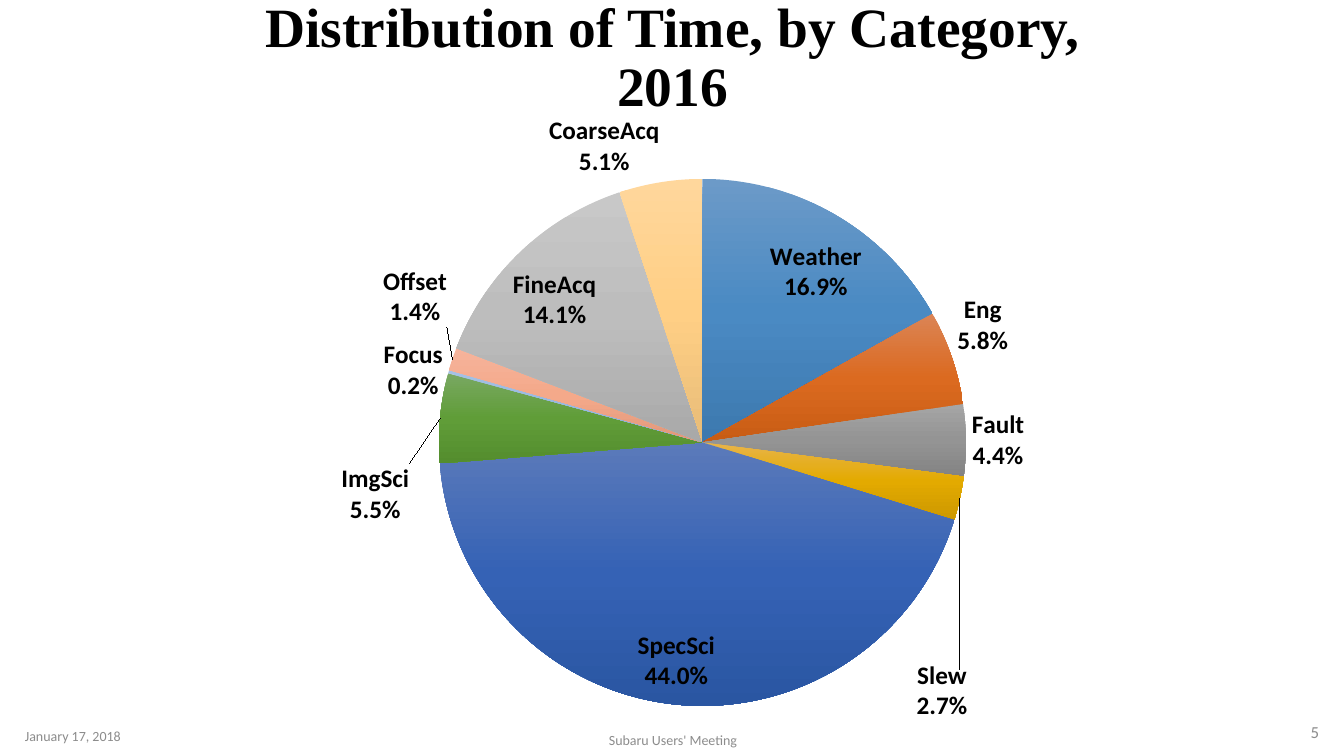
from copy import deepcopy

from lxml import etree
from pptx import Presentation
from pptx.chart.data import CategoryChartData
from pptx.dml.color import RGBColor
from pptx.enum.chart import XL_CHART_TYPE, XL_LABEL_POSITION
from pptx.enum.text import MSO_ANCHOR, PP_ALIGN
from pptx.oxml import parse_xml
from pptx.oxml.ns import nsdecls, qn
from pptx.util import Emu, Pt

PIE, FIT = XL_CHART_TYPE.PIE, XL_LABEL_POSITION.BEST_FIT
OUT = XL_LABEL_POSITION.OUTSIDE_END
LEFT, MID, RIGHT = PP_ALIGN.LEFT, PP_ALIGN.CENTER, PP_ALIGN.RIGHT
CENTER = MSO_ANCHOR.MIDDLE

TITLE = "Distribution of Time, by Category, 2016"
TITLE_BOX = (219, 0, 907, 118)
FOOT = [
    ("January 17, 2018", (15, 716, 302, 40), 10, LEFT),
    ("Subaru Users' Meeting", (446, 720, 454, 40), 10, MID),
    ("5", (1027, 712, 302, 40), 12, RIGHT),
]
# category, percent, gradient from top to bottom
SLICES = [
    ("Weather", 16.9, ("6C9AC8", "4A8AC3", "3D79AF")),
    ("Eng", 5.8, ("DB8455", "DB6A20", "C85C14")),
    ("Fault", 4.4, ("A5A5A5", "949494", "838383")),
    ("Slew", 2.7, ("E8B44A", "E3AA00", "CC9800")),
    ("SpecSci", 44.0, ("5B7ABA", "3562B5", "2A56A2")),
    ("ImgSci", 5.5, ("79A862", "609D38", "548D2E")),
    ("Focus", 0.2, ("A5C1E5", "97B9E0", "88A9D0")),
    ("Offset", 1.4, ("F6B39B", "F4A98A", "E0977A")),
    ("FineAcq", 14.1, ("C8C8C8", "BDBDBD", "A9A9A9")),
    ("CoarseAcq", 5.1, ("FFD79C", "FFCF85", "E8BC78")),
]
CHART = (243, 100, 904, 621)
DISC = (439, 179, 527, 527)
MOVED = {"Slew": (-49, 170), "ImgSci": (-25, 107)}
SCALE = 914400 / 100.8


def px(*nums):
    return [Emu(round(n * SCALE)) for n in nums]


def rgb(code):
    return RGBColor.from_string(code)


def style(font, size, color, bold=False, name="Calibri"):
    font.name, font.size, font.bold = name, Pt(size), bold
    font.color.rgb = rgb(color)


def write(frame, text, align, *look):
    frame.word_wrap = True
    frame.vertical_anchor = CENTER
    para = frame.paragraphs[0]
    para.alignment = align
    run = para.add_run()
    run.text = text
    style(run.font, *look)
    return para


def layout(x, y, size=None):
    """Manual chart layout, in fractions of the chart."""
    parts = []
    if size:
        parts += [("layoutTarget", "inner"), ("xMode", "edge"), ("yMode", "edge")]
    parts += [("x", round(x, 4)), ("y", round(y, 4))]
    if size:
        parts += [("w", round(size[0], 4)), ("h", round(size[1], 4))]
    node = parse_xml(f"<c:layout {nsdecls('c')}><c:manualLayout/></c:layout>")
    for tag, val in parts:
        etree.SubElement(node[0], qn("c:" + tag)).set("val", str(val))
    return node


def shade(fill, colors):
    fill.gradient()
    fill.gradient_angle = 270
    stops = fill.gradient_stops
    first = stops[0]._gs
    first.addnext(deepcopy(first))
    for stop, color, place in zip(fill.gradient_stops, colors, (0, 0.5, 1)):
        stop.color.rgb = rgb(color)
        stop.position = place


def move(label, dx, dy):
    """Shift one label from its usual place, keeping its name and percent."""
    style(label.font, 18, "000000", True)
    label.position = OUT
    node = label._get_or_add_dLbl()
    node.find(qn("c:idx")).addnext(layout(dx / CHART[2], dy / CHART[3]))
    form = parse_xml(
        f'<c:numFmt {nsdecls("c")} formatCode="0.0%" sourceLinked="0"/>')
    node.find(qn("c:txPr")).addprevious(form)
    for tag, val in (("Val", "0"), ("CatName", "1"), ("Percent", "1")):
        node.find(qn("c:show" + tag)).set("val", val)


def add_pie(slide):
    data = CategoryChartData()
    data.categories = [name for name, _, _ in SLICES]
    data.add_series("Series 1", [val for _, val, _ in SLICES])
    chart = slide.shapes.add_chart(PIE, *px(*CHART), data).chart
    chart.has_legend = chart.has_title = False
    style(chart.font, 10, "000000")
    plot = chart.plots[0]
    plot.vary_by_categories = True

    area = chart._chartSpace.chart.plotArea
    for old in area.findall(qn("c:layout")):
        area.remove(old)
    left, top, wide, high = CHART
    area.insert(0, layout((DISC[0] - left) / wide, (DISC[1] - top) / high,
                          (DISC[2] / wide, DISC[3] / high)))

    pie = plot.series[0]
    tags = pie.data_labels
    tags.show_value = False
    tags.show_category_name = tags.show_percentage = True
    tags.number_format, tags.number_format_is_linked = "0.0%", False
    tags.position = FIT
    style(tags.font, 18, "000000", True)
    for i, (name, _, colors) in enumerate(SLICES):
        point = pie.points[i]
        shade(point.format.fill, colors)
        point.format.line.fill.background()
        if name in MOVED:
            move(point.data_label, *MOVED[name])


def main():
    deck = Presentation()
    deck.slide_width, deck.slide_height = px(1344, 756)
    slide = deck.slides.add_slide(deck.slide_layouts[5])
    title = slide.shapes.title
    title.left, title.top, title.width, title.height = px(*TITLE_BOX)
    para = write(title.text_frame, TITLE, MID, 39.6, "000000", True,
                 "Times New Roman")
    para.line_spacing = 0.9
    for text, box, size, align in FOOT:
        frame = slide.shapes.add_textbox(*px(*box)).text_frame
        write(frame, text, align, size, "8C8C8C")
    add_pie(slide)
    deck.save("out.pptx")


if __name__ == "__main__":
    main()
